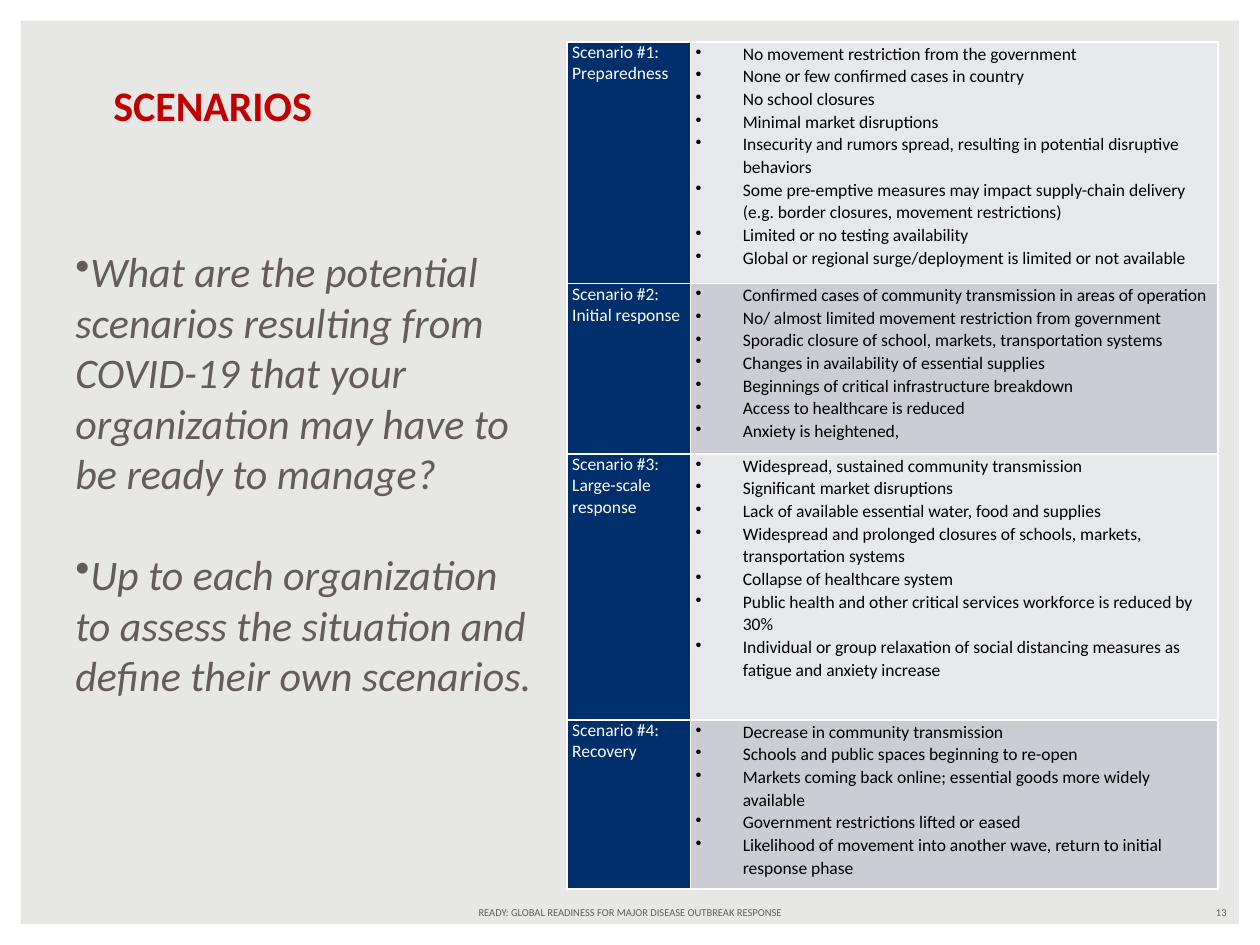
"""Build the outbreak scenarios slide: two discussion prompts beside a scenario table."""
import pptx
import pptx.dml.color
import pptx.enum.shapes
import pptx.enum.text
import pptx.oxml
import pptx.oxml.ns
import pptx.util

Pt = pptx.util.Pt
RGBColor = pptx.dml.color.RGBColor
ALIGN = pptx.enum.text.PP_ALIGN
ANCHOR = pptx.enum.text.MSO_ANCHOR

BACKGROUND = RGBColor(0xE7, 0xE7, 0xE5)
WHITE = RGBColor(0xFF, 0xFF, 0xFF)
BLACK = RGBColor(0x00, 0x00, 0x00)
GRAY = RGBColor(0x63, 0x5C, 0x5B)
RED = RGBColor(0xC0, 0x00, 0x00)
NAVY = RGBColor(0x00, 0x2F, 0x6C)
BANDS = [RGBColor(0xE7, 0xE8, 0xEB), RGBColor(0xCC, 0xCD, 0xD4)]

TITLE_FONT = {"name": "Calibri", "size": Pt(24), "bold": True}
PROMPT_FONT = {"name": "Calibri", "size": Pt(24), "italic": True}
FOOTER_FONT = {"name": "Calibri", "size": Pt(6)}
CELL_FONT = {"name": "Calibri", "size": Pt(10)}
CELL_FORMAT = {"margin_left": Pt(3), "margin_right": Pt(3), "margin_top": 0, "margin_bottom": 0}

PROMPTS = [
    "What are the potential scenarios resulting from COVID-19 that your organization may have to be ready to manage?",
    "Up to each organization to assess the situation and define their own scenarios.",
]
SCENARIOS = [
    ("Scenario #1: Preparedness", 138, [
        "No movement restriction from the government",
        "None or few confirmed cases in country",
        "No school closures",
        "Minimal market disruptions",
        "Insecurity and rumors spread, resulting in potential disruptive behaviors",
        "Some pre-emptive measures may impact supply-chain delivery (e.g. border closures, movement restrictions)",
        "Limited or no testing availability",
        "Global or regional surge/deployment is limited or not available",
    ]),
    ("Scenario #2: Initial response", 97.5, [
        "Confirmed cases of community transmission in areas of operation",
        "No/ almost limited movement restriction from government",
        "Sporadic closure of school, markets, transportation systems",
        "Changes in availability of essential supplies",
        "Beginnings of critical infrastructure breakdown",
        "Access to healthcare is reduced",
        "Anxiety is heightened,",
    ]),
    ("Scenario #3: Large-scale response", 152, [
        "Widespread, sustained community transmission",
        "Significant market disruptions",
        "Lack of available essential water, food and supplies",
        "Widespread and prolonged closures of schools, markets, transportation systems",
        "Collapse of healthcare system",
        "Public health and other critical services workforce is reduced by 30%",
        "Individual or group relaxation of social distancing measures as fatigue and anxiety increase",
    ]),
    ("Scenario #4: Recovery", 96.5, [
        "Decrease in community transmission",
        "Schools and public spaces beginning to re-open",
        "Markets coming back online; essential goods more widely available",
        "Government restrictions lifted or eased",
        "Likelihood of movement into another wave, return to initial response phase",
    ]),
]


def write_lines(frame, lines, font, color, bullet_indent=None, **layout):
    frame.word_wrap = True
    for number, line in enumerate(lines):
        paragraph = frame.paragraphs[0] if number == 0 else frame.add_paragraph()
        run = paragraph.add_run()
        run.text = line
        for name, value in font.items():
            setattr(run.font, name, value)
        run.font.color.rgb = color
        for name, value in layout.items():
            setattr(paragraph, name, value)
        if bullet_indent is not None:
            properties = paragraph._p.get_or_add_pPr()
            properties.set("marL", str(Pt(bullet_indent)))
            properties.set("indent", str(-Pt(bullet_indent)))
            properties.append(pptx.oxml.parse_xml(
                f'<a:buChar {pptx.oxml.ns.nsdecls("a")} char="•"/>'))


def border_cell(cell, color, width):
    properties = cell._tc.get_or_add_tcPr()
    for position, side in enumerate(("lnL", "lnR", "lnT", "lnB")):
        properties.insert(position, pptx.oxml.parse_xml(
            f'<a:{side} {pptx.oxml.ns.nsdecls("a")} w="{Pt(width)}">'
            f'<a:solidFill><a:srgbClr val="{color}"/></a:solidFill></a:{side}>'))


deck = pptx.Presentation()
deck.slide_width, deck.slide_height = Pt(720), Pt(540)
slide = deck.slides.add_slide(deck.slide_layouts[5])
slide.background.fill.solid()
slide.background.fill.fore_color.rgb = BACKGROUND

border = slide.shapes.add_shape(
    pptx.enum.shapes.MSO_SHAPE.FRAME, 0, 0, deck.slide_width, deck.slide_height)
border.adjustments[0] = 0.022
border.shadow.inherit = False
border.fill.solid()
border.fill.fore_color.rgb = WHITE
border.line.fill.background()

prompts = slide.shapes.add_textbox(Pt(36), Pt(137), Pt(276), Pt(325))
write_lines(prompts.text_frame, PROMPTS, PROMPT_FONT, GRAY, bullet_indent=0)
prompts.text_frame.paragraphs[1].space_before = Pt(29)

for text, left, width, alignment in [
    ("READY: GLOBAL READINESS FOR MAJOR DISEASE OUTBREAK RESPONSE", 246, 228, ALIGN.CENTER),
    ("13", 540, 168, ALIGN.RIGHT),
]:
    footer = slide.shapes.add_textbox(Pt(left), Pt(514), Pt(width), Pt(14.4))
    footer.text_frame.vertical_anchor = ANCHOR.MIDDLE
    write_lines(footer.text_frame, [text], FOOTER_FONT, GRAY, alignment=alignment)

scenarios = slide.shapes.add_table(
    len(SCENARIOS), 2, Pt(324), Pt(24), Pt(372), Pt(484)).table
scenarios.first_row = scenarios.horz_banding = False
scenarios.columns[0].width, scenarios.columns[1].width = Pt(70.5), Pt(301.5)
for index, (heading, height, conditions) in enumerate(SCENARIOS):
    scenarios.rows[index].height = Pt(height)
    heading_cell, conditions_cell = scenarios.rows[index].cells
    for cell, fill in [(heading_cell, NAVY), (conditions_cell, BANDS[index % 2])]:
        cell.fill.solid()
        cell.fill.fore_color.rgb = fill
        for name, value in CELL_FORMAT.items():
            setattr(cell, name, value)
        border_cell(cell, WHITE, 1)
    write_lines(heading_cell.text_frame, [heading], CELL_FONT, WHITE)
    write_lines(conditions_cell.text_frame, conditions, CELL_FONT, BLACK,
                bullet_indent=27, line_spacing=1.07)

title = slide.shapes.title
title.left, title.top, title.width, title.height = Pt(36), Pt(42), Pt(171), Pt(36)
title.text_frame.vertical_anchor = ANCHOR.BOTTOM
write_lines(title.text_frame, ["SCENARIOS"], TITLE_FONT, RED, alignment=ALIGN.CENTER)

deck.save("out.pptx")
